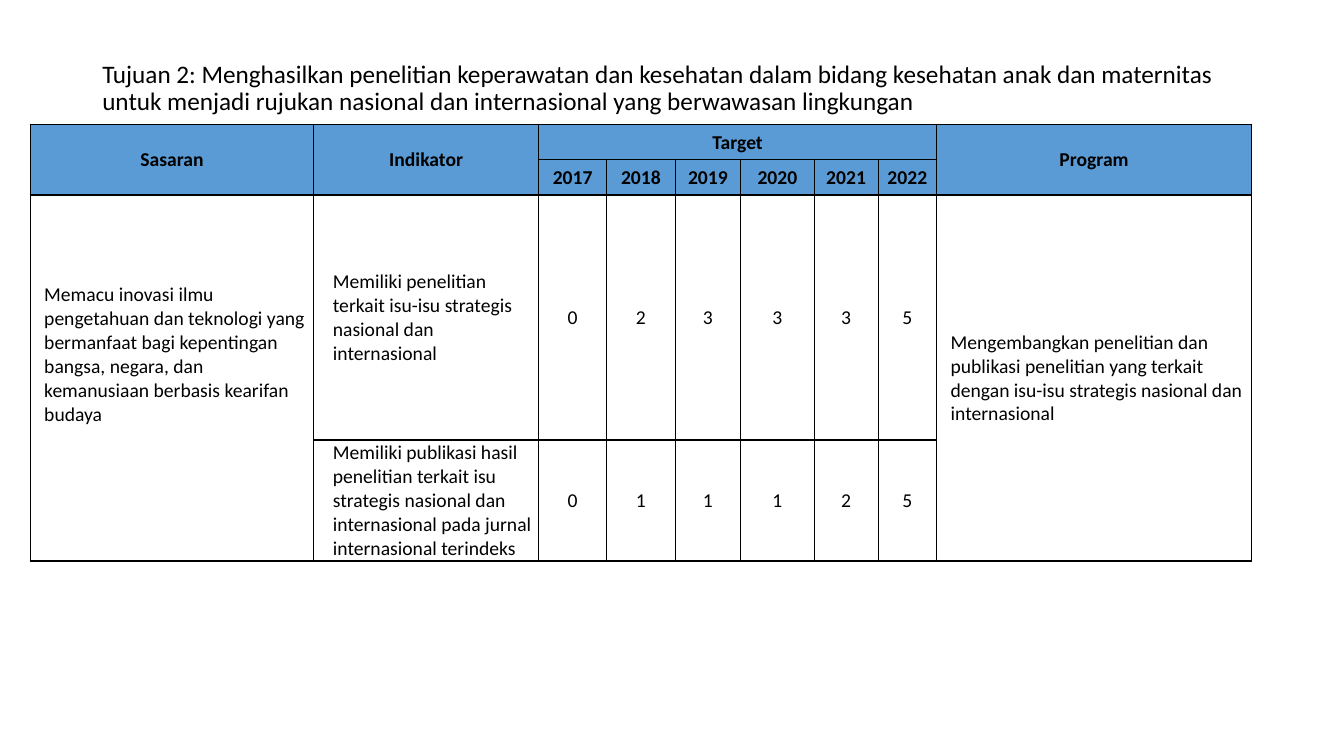
from lxml.etree import SubElement
from pptx import Presentation
from pptx.dml.color import RGBColor
from pptx.enum.text import MSO_ANCHOR as Anchor, PP_ALIGN as Align
from pptx.oxml.ns import qn
from pptx.util import Pt

COLORS = {"ink": "000000", "header": "5B9BD5"}


class TargetSlide:
    font_name = "Calibri"

    def __init__(self, deck):
        self.slide = deck.slides.add_slide(deck.slide_layouts[6])

    def set_text(self, frame, text, size, bold=False, align=Align.LEFT):
        frame.word_wrap = True
        paragraph = frame.paragraphs[0]
        paragraph.text = text
        paragraph.alignment = align
        font = paragraph.font
        font.name, font.size, font.bold = self.font_name, Pt(size), bold
        font.color.rgb = RGBColor.from_string(COLORS["ink"])
        return paragraph

    def heading(self, text, left, top, width, height):
        frame = self.slide.shapes.add_textbox(
            Pt(left), Pt(top), Pt(width), Pt(height)).text_frame
        frame.vertical_anchor = Anchor.MIDDLE
        self.set_text(frame, text, 18).line_spacing = 0.9

    def table(self, left, top, widths, heights):
        table = self.slide.shapes.add_table(
            len(heights), len(widths), Pt(left), Pt(top),
            Pt(sum(widths)), Pt(sum(heights))).table
        table.first_row = table.horz_banding = False
        for column, width in zip(table.columns, widths):
            column.width = Pt(width)
        for row, height in zip(table.rows, heights):
            row.height = Pt(height)
        for cell in table.iter_cells():
            self.border(cell)
            cell.fill.background()
        return table

    def border(self, cell):
        properties = cell._tc.get_or_add_tcPr()
        for side in ("lnL", "lnR", "lnT", "lnB"):
            line = SubElement(properties, qn(f"a:{side}"), w=str(Pt(1)))
            fill = SubElement(line, qn("a:solidFill"))
            SubElement(fill, qn("a:srgbClr"), val=COLORS["ink"])

    def cell(self, cell, text, header=False, indent=None, bottom=0):
        cell.vertical_anchor = Anchor.MIDDLE
        cell.margin_left = Pt(indent or 0.7)
        cell.margin_right = cell.margin_top = Pt(0.7)
        cell.margin_bottom = Pt(bottom)
        if header:
            cell.fill.solid()
            cell.fill.fore_color.rgb = RGBColor.from_string(COLORS["header"])
        align = Align.LEFT if indent else Align.CENTER
        self.set_text(cell.text_frame, text, 14, header, align)


def main():
    deck = Presentation()
    deck.slide_width, deck.slide_height = Pt(960), Pt(540)
    page = TargetSlide(deck)

    # Goal
    page.heading(
        "Tujuan 2: Menghasilkan penelitian keperawatan dan kesehatan dalam "
        "bidang kesehatan anak dan maternitas untuk menjadi rujukan nasional "
        "dan internasional yang berwawasan lingkungan", 66, 38, 828, 51)

    # Table grid and merged cells
    plan = page.table(
        21.6, 88.9,
        [202.5, 160.7, 48.6, 48.9, 46.8, 52.5, 45.7, 41.8, 225],
        [25.2, 25.2, 175, 86.4])
    for column in (0, 1, 8):
        plan.cell(0, column).merge(plan.cell(1, column))
    for column in (0, 8):
        plan.cell(2, column).merge(plan.cell(3, column))
    plan.cell(0, 2).merge(plan.cell(0, 7))

    # Header
    headings = {0: "Sasaran", 1: "Indikator", 2: "Target", 8: "Program"}
    for column, label in headings.items():
        page.cell(plan.cell(0, column), label, header=True)
    for column, year in enumerate(range(2017, 2023), start=2):
        page.cell(plan.cell(1, column), str(year), header=True)

    # Objective and program
    page.cell(
        plan.cell(2, 0),
        "Memacu inovasi ilmu pengetahuan dan teknologi yang bermanfaat bagi "
        "kepentingan bangsa, negara, dan kemanusiaan berbasis kearifan budaya",
        indent=10, bottom=34)
    page.cell(
        plan.cell(2, 8),
        "Mengembangkan penelitian dan publikasi penelitian yang terkait "
        "dengan isu-isu strategis nasional dan internasional", indent=10)

    # Indicators with yearly targets
    indicators = [
        ("Memiliki penelitian terkait isu-isu strategis nasional dan "
         "internasional", [0, 2, 3, 3, 3, 5]),
        ("Memiliki publikasi hasil penelitian terkait isu strategis nasional "
         "dan internasional pada jurnal internasional terindeks",
         [0, 1, 1, 1, 2, 5]),
    ]
    for row, (indicator, targets) in enumerate(indicators, start=2):
        page.cell(plan.cell(row, 1), indicator, indent=13.7)
        for column, target in enumerate(targets, start=2):
            page.cell(plan.cell(row, column), str(target))

    deck.save("out.pptx")


if __name__ == "__main__":
    main()
